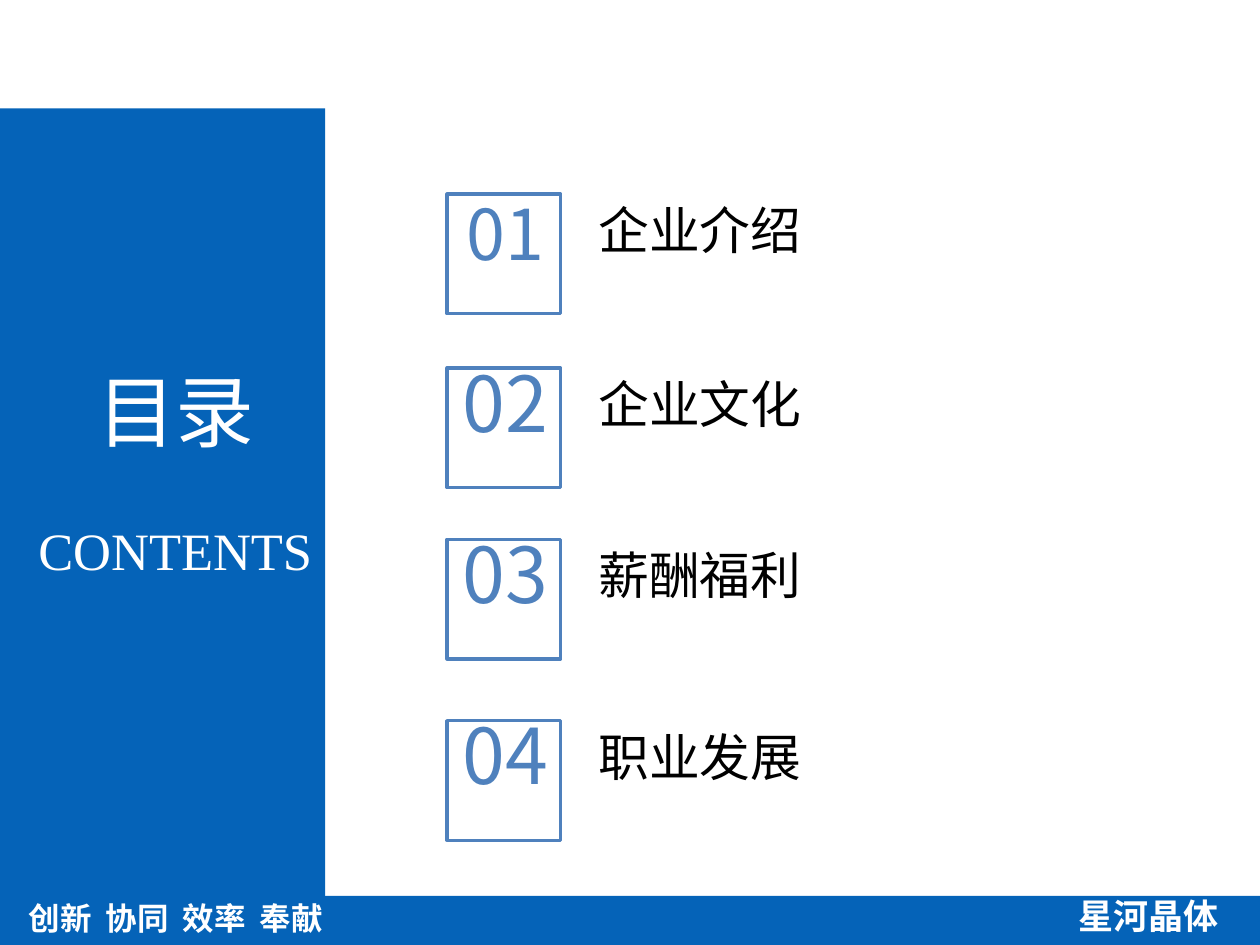
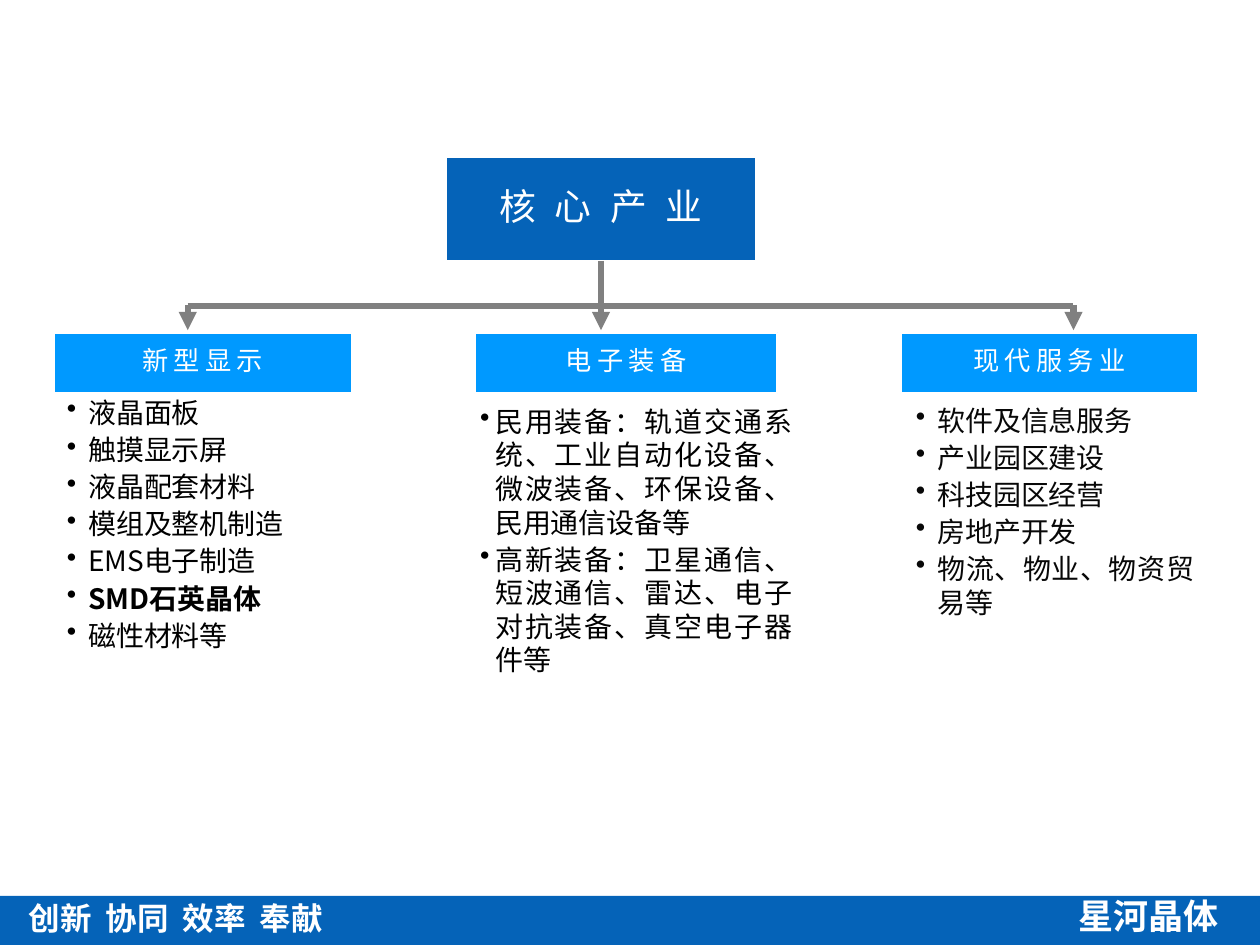
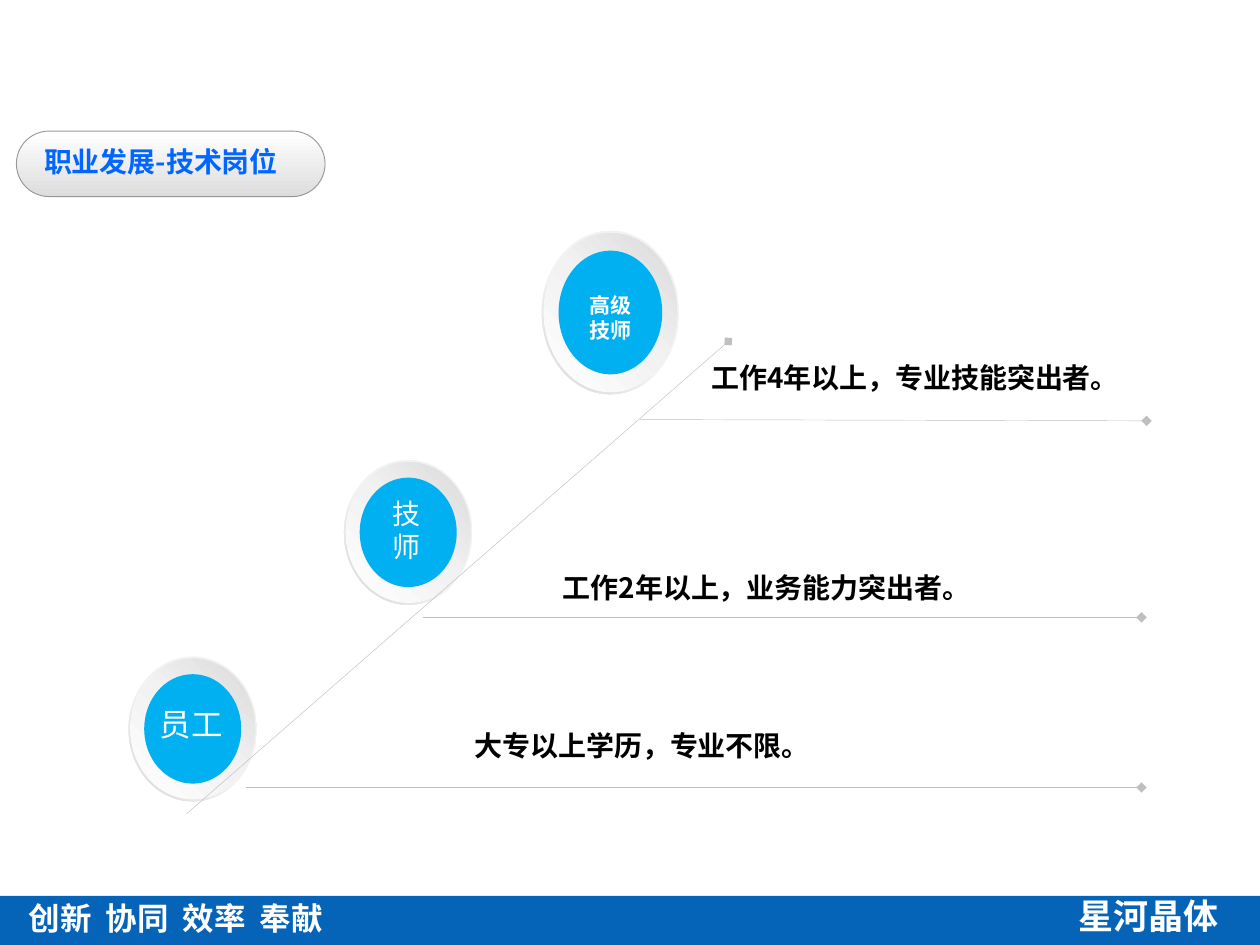
from lxml import etree
from pptx import Presentation
from pptx.dml.color import RGBColor
from pptx.enum.shapes import MSO_CONNECTOR, MSO_SHAPE
from pptx.enum.text import MSO_ANCHOR, MSO_AUTO_SIZE, PP_ALIGN
from pptx.oxml.ns import qn
from pptx.util import Inches, Pt

# Shared colours, fonts and enum members
NAVY = RGBColor(0x05, 0x63, 0xB8)
AZURE = RGBColor(0x00, 0x99, 0xFF)
CYAN = RGBColor(0x00, 0xB0, 0xF0)
STEEL = RGBColor(0x4F, 0x81, 0xBD)
TITLE_BLUE = RGBColor(0x00, 0x66, 0xFF)
WHITE = RGBColor(0xFF, 0xFF, 0xFF)
BLACK = RGBColor(0x00, 0x00, 0x00)
INK = RGBColor(0x08, 0x08, 0x08)
GREY = RGBColor(0x80, 0x80, 0x80)
MID_GREY = RGBColor(0x96, 0x96, 0x96)
SILVER = RGBColor(0xBF, 0xBF, 0xBF)

SANS = "Noto Sans CJK SC"
SERIF = "Times New Roman"
LEFT, CENTER, RIGHT, JUSTIFY = (
    PP_ALIGN.LEFT, PP_ALIGN.CENTER, PP_ALIGN.RIGHT, PP_ALIGN.JUSTIFY)
TOP, MIDDLE = MSO_ANCHOR.TOP, MSO_ANCHOR.MIDDLE
RECT, PILL = MSO_SHAPE.RECTANGLE, MSO_SHAPE.ROUNDED_RECTANGLE
OVAL, RING = MSO_SHAPE.OVAL, MSO_SHAPE.DONUT
TITLE_ONLY = 5
BOTTOM_SIDE = 2
TIGHT = (0.01, 0.01, 0.01, 0.01)
LIST_INSETS = (0.04, 0.01, 0.02, 0.01)
SIDE_INSETS = (0.07, 0.04, 0.07, 0.04)

# Gradients: stops of position and colour, then clockwise angle
PILL_GRADIENT = ([(0, "FFFFFF"), (100, "DDDDDD")], 90)
RIM_GRADIENT = ([(0, "F2F2F2"), (55, "F2F2F2"), (100, "D9D9D9")], 135)
PLATE_GRADIENT = ([(0, "FFFFFF"), (51, "F2F2F2"), (100, "D9D9D9")], 315)


# Text
def add_bullet(para, indent):
    properties = para._p.get_or_add_pPr()
    properties.set("marL", str(Inches(indent)))
    properties.set("indent", str(-Inches(indent)))
    etree.SubElement(properties, qn("a:buChar")).set("char", "•")


def add_tabs(para, step, count):
    tabs = etree.SubElement(para._p.get_or_add_pPr(), qn("a:tabLst"))
    for number in range(1, count + 1):
        tab = etree.SubElement(tabs, qn("a:tab"))
        tab.set("pos", str(Inches(step * number)))
        tab.set("algn", "l")


def write_text(box, text, size=16, color=BLACK, font=SANS, bold=False, align=LEFT,
               anchor=TOP, insets=(0.1, 0.05, 0.1, 0.05), spacing=None, tracking=0,
               bullet_indent=None, gap=0, bold_line=None, tab_step=None):
    frame = box.text_frame
    frame.word_wrap = True
    frame.auto_size = MSO_AUTO_SIZE.NONE
    frame.vertical_anchor = anchor
    (frame.margin_left, frame.margin_top,
     frame.margin_right, frame.margin_bottom) = map(Inches, insets)
    for index, line in enumerate(text.split("\n")):
        para = frame.add_paragraph() if index else frame.paragraphs[0]
        if bullet_indent:
            add_bullet(para, bullet_indent)
        if tab_step:
            add_tabs(para, tab_step, line.count("\t"))
        para.alignment = align
        if spacing:
            para.line_spacing = spacing
        if index and gap:
            para.space_before = Pt(gap)
        span = para.add_run()
        span.text = line
        span.font.size = Pt(size)
        span.font.bold = bold or line == bold_line
        span.font.color.rgb = color
        span.font.name = font
        properties = span._r.get_or_add_rPr()
        etree.SubElement(properties, qn("a:ea")).set("typeface", font)
        if tracking:
            properties.set("spc", str(tracking * 100))


def add_text(page, place, text, **style):
    box = page.shapes.add_textbox(*map(Inches, place))
    write_text(box, text, **style)
    return box


def place_title(page, place, text, **style):
    title = page.shapes.title
    title.left, title.top, title.width, title.height = map(Inches, place)
    write_text(title, text, **style)
    page.shapes.element.append(title.element)  # bring to the front
    return title


# Shapes and lines
def paint(shape, fill=None, line=None, width=1):
    if fill is None:
        shape.fill.background()
    else:
        shape.fill.solid()
        shape.fill.fore_color.rgb = fill
    if line is None:
        shape.line.fill.background()
    else:
        shape.line.color.rgb = line
        shape.line.width = Pt(width)


def paint_gradient(shape, stops, angle):
    shape.fill.gradient()
    gradient = shape.element.spPr.find(qn("a:gradFill"))
    for child in list(gradient):
        gradient.remove(child)
    stop_list = etree.SubElement(gradient, qn("a:gsLst"))
    for position, color in stops:
        stop = etree.SubElement(stop_list, qn("a:gs"))
        stop.set("pos", str(position * 1000))
        etree.SubElement(stop, qn("a:srgbClr")).set("val", color)
    etree.SubElement(gradient, qn("a:lin")).set("ang", str(angle * 60000))


def add_shape(page, kind, place, fill=None, line=None, width=1, gradient=None):
    shape = page.shapes.add_shape(kind, *map(Inches, place))
    shape.shadow.inherit = False
    paint(shape, fill, line, width)
    if gradient:
        paint_gradient(shape, *gradient)
    return shape


def add_line(page, start, end, color, width, head=None):
    line = page.shapes.add_connector(
        MSO_CONNECTOR.STRAIGHT, *map(Inches, (*start, *end)))
    line.line.color.rgb = color
    line.line.width = Pt(width)
    if head:
        outline = line.line._get_or_add_ln()
        etree.SubElement(outline, qn("a:tailEnd")).set("type", head)
    etree.SubElement(line._element.spPr, qn("a:effectLst"))
    return line


# Footer band, moved to the master so that every slide shows it
def add_master_footer(deck, page):
    band = add_shape(page, RECT, (0, 7.11, 10, 0.39), NAVY)
    motto = add_text(page, (0.15, 7.09, 3.61, 0.39), "创新\t协同\t效率\t奉献", size=18,
                     color=WHITE, bold=True, anchor=MIDDLE,
                     insets=(0.08, 0.04, 0.08, 0.04), tab_step=0.61)
    company = add_text(page, (8.46, 7.05, 1.42, 0.44), "星河晶体", size=20,
                       color=WHITE, bold=True)
    for number, part in enumerate((band, motto, company), start=101):
        part.element.nvSpPr.cNvPr.set("id", str(number))
        deck.slide_master.shapes.element.append(part.element)


# Slide 1: contents
def add_chapter(page, number, label, top, size=44, rise=0.15):
    add_text(page, (4.65, top - 0.01, 2.62, 0.59), label, size=29)
    add_text(page, (3.52, top - rise, 0.98, 0.84), number, size=size,
             color=STEEL, align=CENTER)
    add_shape(page, RECT, (3.55, top, 0.9, 0.95), line=STEEL, width=2)


def build_contents(page):
    add_shape(page, RECT, (0, 0.86, 2.58, 6.25), NAVY)
    place_title(page, (0.19, 2.84, 1.9, 0.83), "目录", size=45, color=WHITE,
                align=RIGHT, insets=SIDE_INSETS)
    add_text(page, (-0.1, 4.07, 2.65, 0.58), "CONTENTS", size=30, color=WHITE,
             font=SERIF, align=RIGHT, insets=SIDE_INSETS)
    add_chapter(page, "01", "企业介绍", 1.54, size=40, rise=0.08)
    add_chapter(page, "02", "企业文化", 2.92)
    add_chapter(page, "03", "薪酬福利", 4.28)
    add_chapter(page, "04", "职业发展", 5.72)


# Slide 2: core industries
def add_industry(page, left, width, name, list_place, items, **style):
    add_text(page, list_place, items, align=JUSTIFY, insets=LIST_INSETS, gap=2, **style)
    header = add_shape(page, RECT, (left, 2.64, width, 0.48), AZURE, WHITE)
    write_text(header, name, size=15, color=WHITE, align=CENTER, anchor=MIDDLE,
               insets=TIGHT, spacing=0.85, tracking=3)


def build_industries(page):
    add_industry(page, 0.43, 2.36, "新型显示", (0.49, 3.13, 1.99, 3.06),
                 "液晶面板\n触摸显示屏\n液晶配套材料\n模组及整机制造\n"
                 "EMS电子制造\nSMD石英晶体\n磁性材料等",
                 bullet_indent=0.17, bold_line="SMD石英晶体")
    add_industry(page, 3.77, 2.4, "电子装备", (3.77, 3.2, 2.54, 3.06),
                 "民用装备：轨道交通系统、工业自动化设备、微波装备、环保设备、民用通信设备等\n"
                 "高新装备：卫星通信、短波通信、雷达、电子对抗装备、真空电子器件等",
                 bullet_indent=0.12)
    add_industry(page, 7.15, 2.36, "现代服务业", (7.23, 3.19, 2.27, 3.06),
                 "软件及信息服务\n产业园区建设\n科技园区经营\n房地产开发\n"
                 "物流、物业、物资贸易等",
                 bullet_indent=0.17, color=INK)

    core = place_title(page, (3.54, 1.25, 2.46, 0.82), "核 心 产 业", size=21,
                       color=WHITE, align=CENTER, anchor=MIDDLE, insets=TIGHT,
                       spacing=0.85, tracking=3)
    paint(core, NAVY, WHITE)

    # Branches from the core to the three industries
    stem = add_line(page, (4.77, 2.07), (4.77, 2.62), GREY, 3.5, "triangle")
    stem.begin_connect(core, BOTTOM_SIDE)
    add_line(page, (1.49, 2.43), (8.52, 2.43), GREY, 3.5)
    for x in (1.49, 8.52):
        add_line(page, (x, 2.42), (x, 2.62), GREY, 3.5, "triangle")


# Slide 3: career steps
def centered(place, scale):
    left, top, width, height = place
    margin = (1 - scale) / 2
    return (left + width * margin, top + height * margin, width * scale, height * scale)


def add_badge(page, place, label, label_place, **style):
    rim = add_shape(page, RING, place, gradient=RIM_GRADIENT)
    rim.adjustments[0] = 0.05
    add_shape(page, OVAL, centered(place, 0.97), gradient=PLATE_GRADIENT)
    add_shape(page, OVAL, centered(place, 0.755), CYAN)
    add_text(page, label_place, label, color=WHITE, **style)


def add_requirement(page, left, top, text, line_start, line_end):
    add_line(page, line_start, line_end, SILVER, 0.25, "diamond")
    add_text(page, (left, top, 4.06, 0.37), text, bold=True)


def build_career(page):
    pill = add_shape(page, PILL, (0.13, 1.04, 2.45, 0.52), line=MID_GREY, width=0.5,
                     gradient=PILL_GRADIENT)
    pill.adjustments[0] = 0.5
    place_title(page, (0.25, 1.04, 2.33, 0.52), "职业发展-技术岗位", color=TITLE_BLUE,
                bold=True, anchor=MIDDLE, spacing=0.9, insets=(0.1, 0.05, 0, 0.05))

    add_badge(page, (2.73, 3.65, 1.02, 1.15), "技师", (3.02, 3.89, 0.58, 0.64))
    add_badge(page, (1.02, 5.21, 1.02, 1.15), "员工", (1.17, 5.55, 0.7, 0.4), size=18)
    add_badge(page, (4.3, 1.83, 1.09, 1.3), "高级技师", (4.58, 2.27, 0.58, 0.5),
              size=12, bold=True)

    add_line(page, (1.48, 6.46), (5.78, 2.71), SILVER, 0.25, "diamond")
    add_requirement(page, 4.37, 4.48, "工作2年以上，业务能力突出者。",
                    (3.36, 4.9), (9.06, 4.9))
    add_requirement(page, 5.55, 2.81, "工作4年以上，专业技能突出者。",
                    (5.08, 3.33), (9.1, 3.34))
    add_requirement(page, 3.67, 5.73, "大专以上学历，专业不限。",
                    (1.95, 6.25), (9.06, 6.25))


def main():
    deck = Presentation()
    deck.slide_width, deck.slide_height = Inches(10), Inches(7.5)
    layout = deck.slide_layouts[TITLE_ONLY]
    contents, industries, career = [deck.slides.add_slide(layout) for _ in range(3)]
    add_master_footer(deck, contents)
    build_contents(contents)
    build_industries(industries)
    build_career(career)
    deck.save("out.pptx")


if __name__ == "__main__":
    main()
